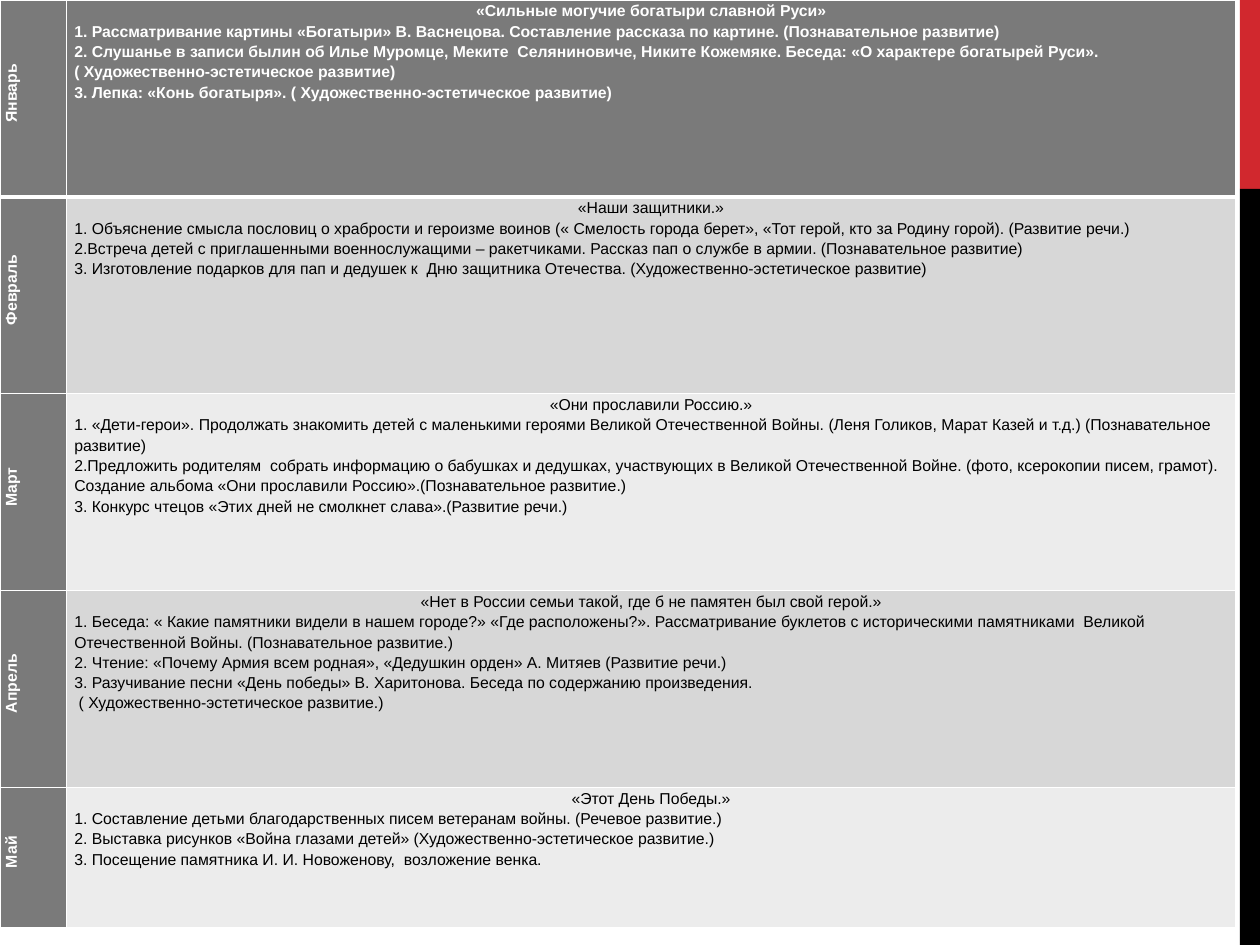
"""Builds a slide with a monthly plan of patriotic education activities."""
from typing import NamedTuple

from lxml import etree
from pptx import Presentation
from pptx.dml.color import RGBColor
from pptx.enum.shapes import MSO_SHAPE
from pptx.enum.text import PP_ALIGN
from pptx.oxml.ns import qn
from pptx.util import Pt

RECTANGLE = MSO_SHAPE.RECTANGLE
CENTER, LEFT = PP_ALIGN.CENTER, PP_ALIGN.LEFT
WHITE, BLACK, RED = "FFFFFF", "000000", "D1282E"
DARK, MIDDLE, PALE = "7A7A7A", "D7D7D7", "ECECEC"
THIN, THICK = 1, 3
BLANK_LAYOUT = 6
COLUMN_WIDTHS = (38, 668)


class Band(NamedTuple):
    top: float
    height: float
    color: str


class Month(NamedTuple):
    name: str
    height: float
    theme: str
    activities: tuple[str, ...]


BANDS = (Band(0, 108, RED), Band(108, 432, BLACK))

MONTHS = (
    Month("Январь", 112.5, "«Сильные могучие богатыри славной Руси»", (
        "1. Рассматривание картины «Богатыри» В. Васнецова. Составление рассказа по картине. "
        "(Познавательное развитие)",
        "2. Слушанье в записи былин об Илье Муромце, Меките  Селяниновиче, Никите Кожемяке. "
        "Беседа: «О характере богатырей Руси». ( Художественно-эстетическое развитие)",
        "3. Лепка: «Конь богатыря». ( Художественно-эстетическое развитие)",
    )),
    Month("Февраль", 112.5, "«Наши защитники.»", (
        "1. Объяснение смысла пословиц о храбрости и героизме воинов (« Смелость города берет», "
        "«Тот герой, кто за Родину горой). (Развитие речи.)",
        "2.Встреча детей с приглашенными военнослужащими – ракетчиками. "
        "Рассказ пап о службе в армии. (Познавательное развитие)",
        "3. Изготовление подарков для пап и дедушек к  Дню защитника Отечества. "
        "(Художественно-эстетическое развитие)",
    )),
    Month("Март", 112.5, "«Они прославили Россию.»", (
        "1. «Дети-герои». Продолжать знакомить детей с маленькими героями Великой Отечественной "
        "Войны. (Леня Голиков, Марат Казей и т.д.) (Познавательное развитие)",
        "2.Предложить родителям  собрать информацию о бабушках и дедушках, участвующих в Великой "
        "Отечественной Войне. (фото, ксерокопии писем, грамот). "
        "Создание альбома «Они прославили Россию».(Познавательное развитие.)",
        "3. Конкурс чтецов «Этих дней не смолкнет слава».(Развитие речи.)",
    )),
    Month("Апрель", 112.5, "«Нет в России семьи такой, где б не памятен был свой герой.»", (
        "1. Беседа: « Какие памятники видели в нашем городе?» «Где расположены?». "
        "Рассматривание буклетов с историческими памятниками  Великой Отечественной Войны. "
        "(Познавательное развитие.)",
        "2. Чтение: «Почему Армия всем родная», «Дедушкин орден» А. Митяев (Развитие речи.)",
        "3. Разучивание песни «День победы» В. Харитонова. Беседа по содержанию произведения.",
        " ( Художественно-эстетическое развитие.)",
    )),
    Month("Май", 80, "«Этот День Победы.»", (
        "1. Составление детьми благодарственных писем ветеранам войны. (Речевое развитие.)",
        "2. Выставка рисунков «Война глазами детей» (Художественно-эстетическое развитие.)",
        "3. Посещение памятника И. И. Новоженову,  возложение венка.",
    )),
)


def paint(fill, color: str) -> None:
    """Makes a fill solid in the given colour."""
    fill.solid()
    fill.fore_color.rgb = RGBColor.from_string(color)


def draw_band(slide, band: Band) -> None:
    """Draws one part of the stripe at the right edge."""
    stripe = slide.shapes.add_shape(
        RECTANGLE, Pt(708.5), Pt(band.top), Pt(11.5), Pt(band.height))
    stripe.shadow.inherit = False
    paint(stripe.fill, band.color)
    stripe.line.fill.background()


def set_borders(cell, top: float, bottom: float) -> None:
    """Puts white borders around a cell."""
    properties = cell._tc.get_or_add_tcPr()
    for side, width in (("L", THIN), ("R", THIN), ("T", top), ("B", bottom)):
        line = etree.SubElement(properties, qn(f"a:ln{side}"), w=str(Pt(width)))
        solid = etree.SubElement(line, qn("a:solidFill"))
        etree.SubElement(solid, qn("a:srgbClr"), val=WHITE)


def fill_cell(cell, lines: tuple[str, ...], fill: str, color: str, bold: bool) -> None:
    """Writes the lines into a cell, the first one centred."""
    cell.margin_left = cell.margin_right = Pt(4.5)
    cell.margin_top = cell.margin_bottom = Pt(0)
    paint(cell.fill, fill)
    cell.text_frame.text = "\n".join(lines)
    for index, paragraph in enumerate(cell.text_frame.paragraphs):
        paragraph.alignment = LEFT if index else CENTER
        paragraph.line_spacing = 1.15
        for run in paragraph.runs:
            run.font.name = "Arial"
            run.font.size = Pt(9)
            run.font.bold = bold
            paint(run.font.fill, color)


def turn_upward(cell) -> None:
    """Makes the text of a month cell run from bottom to top."""
    cell._tc.get_or_add_tcPr().set("vert", "vert270")
    cell.text_frame.paragraphs[0]._p.get_or_add_pPr().set("marL", str(Pt(6)))


def draw_plan(slide, months: tuple[Month, ...]) -> None:
    """Draws the table with one row for each month."""
    plan = slide.shapes.add_table(
        len(months), len(COLUMN_WIDTHS), Pt(0), Pt(0),
        Pt(sum(COLUMN_WIDTHS)), Pt(sum(month.height for month in months))).table
    for column, width in zip(plan.columns, COLUMN_WIDTHS):
        column.width = Pt(width)
    for index, month in enumerate(months):
        plan.rows[index].height = Pt(month.height)
        name_cell, activity_cell = plan.rows[index].cells
        for cell in (name_cell, activity_cell):
            set_borders(cell, THICK if index == 1 else THIN, THICK if index == 0 else THIN)
        fill_cell(name_cell, (month.name,), DARK, WHITE, True)
        turn_upward(name_cell)
        first = index == 0
        shade = DARK if first else (PALE, MIDDLE)[index % 2]
        fill_cell(activity_cell, (month.theme, *month.activities), shade,
                  WHITE if first else BLACK, first)


def main() -> None:
    """Builds and saves the slide."""
    presentation = Presentation()
    presentation.slide_width, presentation.slide_height = Pt(720), Pt(540)
    slide = presentation.slides.add_slide(presentation.slide_layouts[BLANK_LAYOUT])
    paint(slide.background.fill, WHITE)
    for band in BANDS:
        draw_band(slide, band)
    draw_plan(slide, MONTHS)
    presentation.save("out.pptx")


if __name__ == "__main__":
    main()
